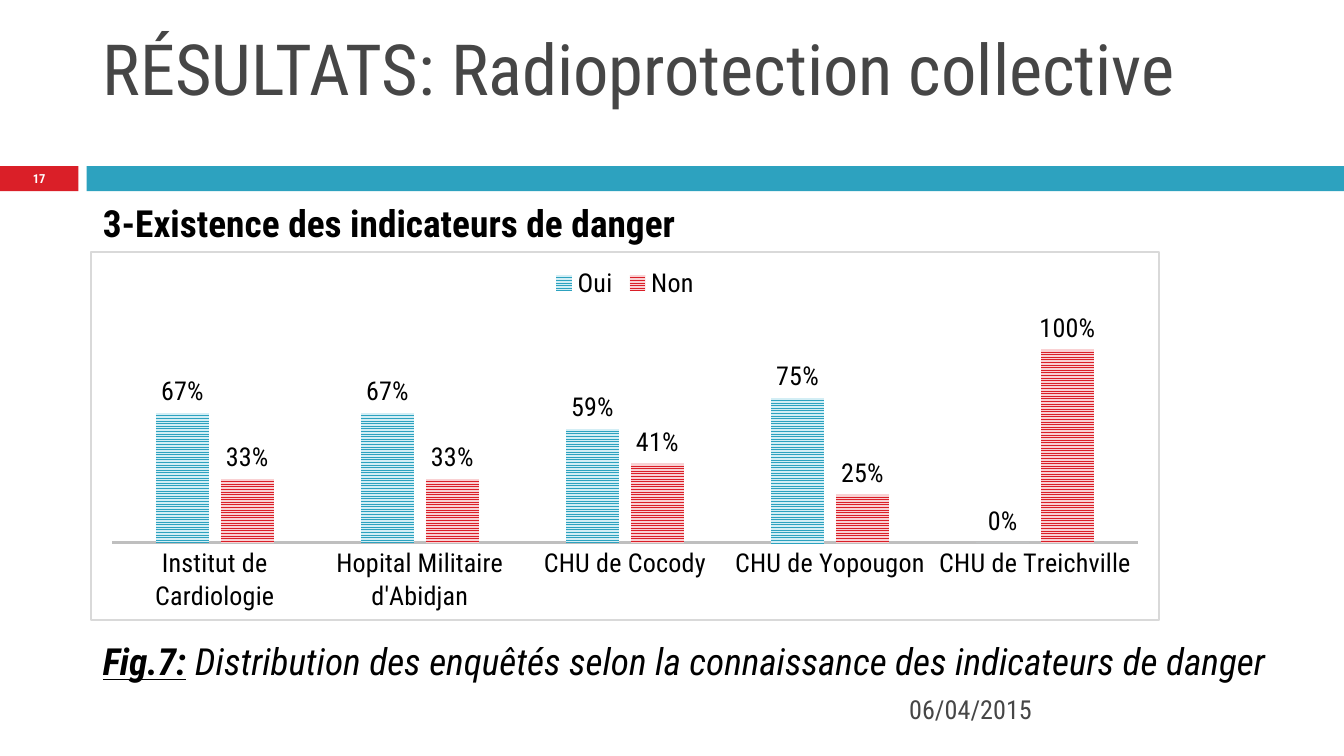
"""Build the survey results slide on collective radiation protection."""
from dataclasses import dataclass

from pptx import Presentation
from pptx import util as u
from pptx.chart import data
from pptx.dml.color import RGBColor
from pptx.enum import chart as ch, dml, shapes, text
from pptx.oxml import parse_xml
from pptx.oxml.ns import nsdecls

Pt = u.Pt


@dataclass(frozen=True)
class Theme:
    font: str = "Roboto Condensed"
    red: str = "DA1F28"
    pale_red: str = "F9D1D3"
    teal: str = "2DA2BF"
    pale_teal: str = "D3EEF5"
    grey: str = "464646"
    axis: str = "BFBFBF"
    border: str = "D9D9D9"
    black: str = "000000"
    white: str = "FFFFFF"
    title: float = 37.8
    body: float = 20
    small: float = 14
    number: float = 6.7


theme = Theme()
rgb = RGBColor.from_string


def style_font(font, size, color, bold=False, italic=False, underline=False):
    font.name, font.size, font.color.rgb = theme.font, Pt(size), rgb(color)
    font.bold, font.italic, font.underline = bold, italic, underline


def add_text(page, place, runs, size, color, align=text.PP_ALIGN.LEFT, inset=7.2):
    box = page.shapes.add_textbox(*map(Pt, place))
    frame = box.text_frame
    frame.word_wrap = True
    frame.vertical_anchor = text.MSO_ANCHOR.MIDDLE
    frame.margin_left = frame.margin_right = Pt(inset)
    frame.margin_top = frame.margin_bottom = 0
    para = frame.paragraphs[0]
    para.alignment = align
    for words, marks in runs:
        span = para.add_run()
        span.text = words
        style_font(span.font, size, color, **marks)


deck = Presentation()
deck.slide_width, deck.slide_height = Pt(720), Pt(405)
page = deck.slides.add_slide(deck.slide_layouts[6])

for left, width, color in ((0, 42, theme.red), (46.5, 673.5, theme.teal)):
    band = page.shapes.add_shape(shapes.MSO_SHAPE.RECTANGLE, Pt(left), Pt(89), Pt(width), Pt(13.5))
    band.shadow.inherit = False
    band.fill.solid()
    band.fill.fore_color.rgb = rgb(color)
    band.line.fill.background()

add_text(page, (48, 12, 642, 48), [("RÉSULTATS: Radioprotection collective", {})],
         theme.title, theme.grey)
add_text(page, (0, 89, 42, 13.5), [("17", {"bold": True})],
         theme.number, theme.white, text.PP_ALIGN.CENTER, 0)
add_text(page, (48, 106, 642, 26), [("3-Existence des indicateurs de danger", {"bold": True})],
         theme.body, theme.black)
add_text(page, (48, 341, 642, 26),
         [("Fig.7:", {"bold": True, "italic": True, "underline": True}),
          (" Distribution des enquêtés selon la connaissance des indicateurs de danger",
           {"italic": True})],
         theme.body, theme.black)
add_text(page, (480, 369, 210, 22), [("06/04/2015", {})], theme.small, theme.grey)

survey = data.CategoryChartData(number_format="0%")
survey.categories = ["Institut de Cardiologie", "Hopital Militaire d'Abidjan",
                     "CHU de Cocody", "CHU de Yopougon", "CHU de Treichville"]
survey.add_series("Oui", (0.67, 0.67, 0.59, 0.75, 0))
survey.add_series("Non", (0.33, 0.33, 0.41, 0.25, 1))
chart = page.shapes.add_chart(ch.XL_CHART_TYPE.COLUMN_CLUSTERED,
                              Pt(48.4), Pt(134.6), Pt(573), Pt(198), survey).chart
style_font(chart.font, theme.small, theme.black)
chart.has_title = False
chart.has_legend = True
chart.legend.position = ch.XL_LEGEND_POSITION.TOP
chart.legend.include_in_layout = False

categories = chart.category_axis
categories.major_tick_mark = ch.XL_TICK_MARK.NONE
categories.format.line.color.rgb = rgb(theme.axis)
categories.format.line.width = Pt(1.5)
values = chart.value_axis
values.visible = False
values.has_major_gridlines = False
values.minimum_scale, values.maximum_scale = 0, 1.2

plot = chart.plots[0]
plot.gap_width, plot.overlap = 164, -22
plot.vary_by_categories = False
plot.has_data_labels = True
labels = plot.data_labels
labels.show_value = True
labels.number_format, labels.number_format_is_linked = "0%", False
labels.position = ch.XL_LABEL_POSITION.OUTSIDE_END
tints = ((theme.teal, theme.pale_teal), (theme.red, theme.pale_red))
for series, (front, back) in zip(plot.series, tints):
    fill = series.format.fill
    fill.patterned()
    fill.pattern = dml.MSO_PATTERN.NARROW_HORIZONTAL
    fill.fore_color.rgb, fill.back_color.rgb = rgb(front), rgb(back)

space = chart._chartSpace
area = space.chart.plotArea
for layout in area.xpath("c:layout"):
    area.remove(layout)
sides = "".join(f'<c:{name} val="{size}"/>' for name, size in
                (("x", 0.02), ("y", 0.16), ("w", 0.96), ("h", 0.63)))
area.insert(0, parse_xml(
    f'<c:layout {nsdecls("c")}><c:manualLayout><c:layoutTarget val="inner"/>'
    f'<c:xMode val="edge"/><c:yMode val="edge"/>{sides}</c:manualLayout></c:layout>'))
space.chart.addnext(parse_xml(
    f'<c:spPr {nsdecls("c", "a")}><a:solidFill><a:srgbClr val="{theme.white}"/></a:solidFill>'
    f'<a:ln w="{Pt(0.75)}"><a:solidFill><a:srgbClr val="{theme.border}"/></a:solidFill></a:ln></c:spPr>'))

deck.save("out.pptx")
